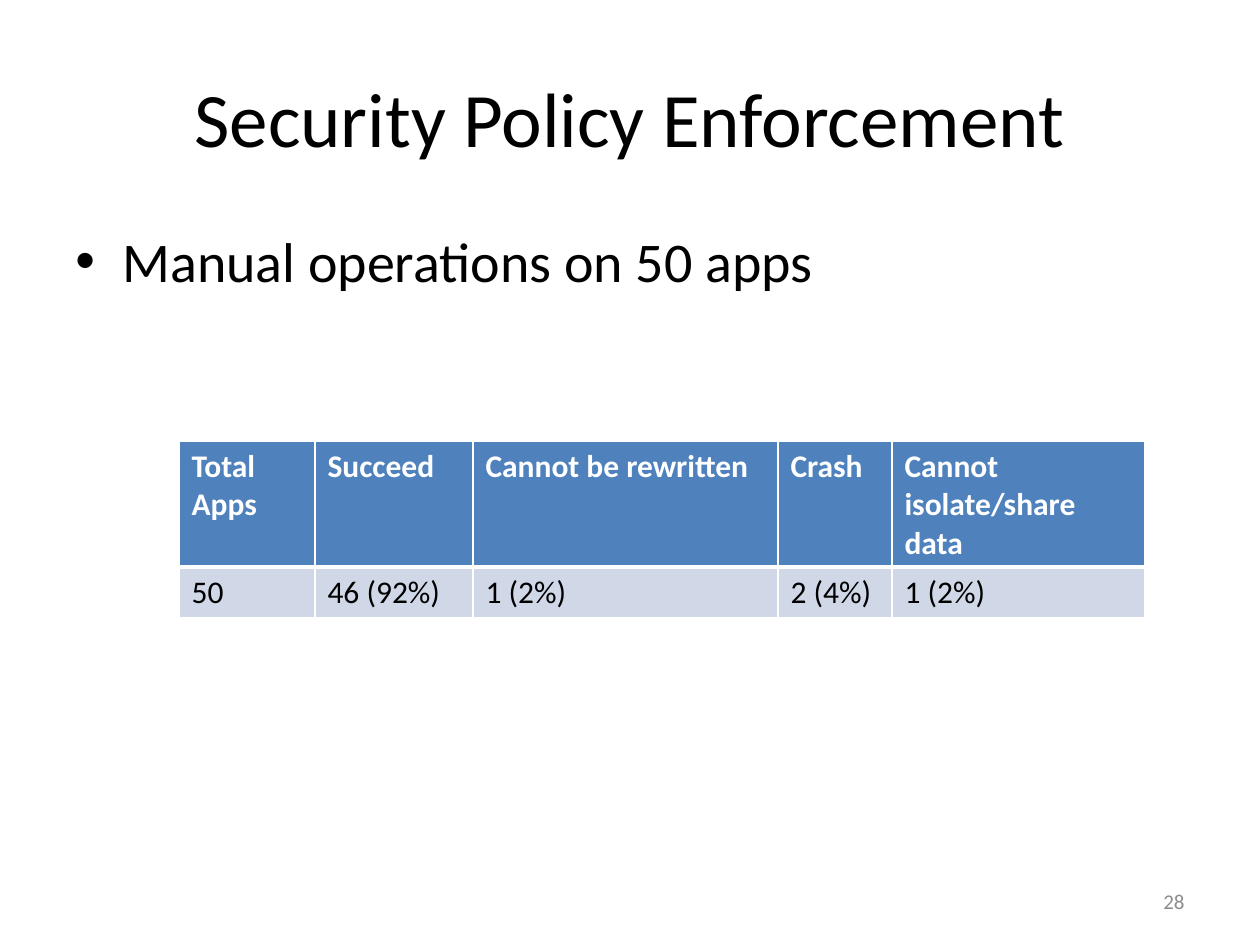
from lxml import etree
from pptx import Presentation
from pptx.dml.color import RGBColor
from pptx.enum.text import MSO_ANCHOR, PP_ALIGN
from pptx.oxml.ns import qn
from pptx.util import Pt

MIDDLE = MSO_ANCHOR.MIDDLE
LEFT, CENTER, RIGHT = PP_ALIGN.LEFT, PP_ALIGN.CENTER, PP_ALIGN.RIGHT
FONT = "Calibri"
COLORS = {"text": "000000", "muted": "8C8C8C", "header": "4F81BD",
          "row": "D0D8E8", "white": "FFFFFF"}

TITLE = "Security Policy Enforcement"
BULLET = "Manual operations on 50 apps"
PAGE_NUMBER = "28"
RESULTS = [
    ("Total Apps", "Succeed", "Cannot be rewritten", "Crash",
     "Cannot isolate/share data"),
    ("50", "46 (92%)", "1 (2%)", "2 (4%)", "1 (2%)"),
]
COLUMN_WIDTHS = [136, 158, 305, 114, 253]
ROW_HEIGHTS = [126, 51]
TABLE_LEFT, TABLE_TOP = 179, 441


def px(length):
    return round(length * 914400 / 126)


def box(*lengths):
    return [px(length) for length in lengths]


def style(paragraph, size, color, align=LEFT, bold=False):
    paragraph.alignment = align
    font = paragraph.font if not paragraph.runs else paragraph.runs[0].font
    font.name, font.size, font.bold = FONT, Pt(size), bold
    font.color.rgb = RGBColor.from_string(COLORS[color])


def add_text(slide, area, text):
    frame = slide.shapes.add_textbox(*box(*area)).text_frame
    frame.word_wrap = True
    frame.text = text
    return frame


def add_bullet(paragraph, indent):
    properties = paragraph._p.get_or_add_pPr()
    properties.set("marL", str(px(indent)))
    properties.set("indent", str(-px(indent)))
    etree.SubElement(properties, qn("a:buFont")).set("typeface", "Arial")
    etree.SubElement(properties, qn("a:buChar")).set("char", "•")


def set_borders(cell, widths):
    properties = cell._tc.get_or_add_tcPr()
    for side, width in widths.items():
        line = etree.SubElement(properties, qn(f"a:ln{side}"), w=str(Pt(width)))
        fill = etree.SubElement(line, qn("a:solidFill"))
        etree.SubElement(fill, qn("a:srgbClr"), val=COLORS["white"])


def add_results(slide):
    area = box(TABLE_LEFT, TABLE_TOP, sum(COLUMN_WIDTHS), sum(ROW_HEIGHTS))
    table = slide.shapes.add_table(len(RESULTS), len(COLUMN_WIDTHS), *area).table
    for column, width in zip(table.columns, COLUMN_WIDTHS):
        column.width = px(width)
    for r, (values, height) in enumerate(zip(RESULTS, ROW_HEIGHTS)):
        table.rows[r].height = px(height)
        header = r == 0
        borders = {"L": 1, "R": 1, "T": 1 if header else 3, "B": 3 if header else 1}
        for c, value in enumerate(values):
            cell = table.cell(r, c)
            cell.text = value
            style(cell.text_frame.paragraphs[0], 18,
                  "white" if header else "text", bold=header)
            set_borders(cell, borders)
            cell.fill.solid()
            cell.fill.fore_color.rgb = RGBColor.from_string(
                COLORS["header" if header else "row"])


def main():
    deck = Presentation()
    deck.slide_width, deck.slide_height = box(1260, 945)
    slide = deck.slides.add_slide(deck.slide_layouts[5])

    title = slide.shapes.title
    title.left, title.top, title.width, title.height = box(63, 38, 1134, 158)
    title.text_frame.text = TITLE
    title.text_frame.vertical_anchor = MIDDLE
    style(title.text_frame.paragraphs[0], 44, "text", CENTER)

    point = add_text(slide, (63, 220, 1134, 624), BULLET).paragraphs[0]
    add_bullet(point, 47)
    style(point, 32, "text")

    number = add_text(slide, (903, 876, 294, 50), PAGE_NUMBER)
    number.vertical_anchor = MIDDLE
    style(number.paragraphs[0], 12, "muted", RIGHT)

    add_results(slide)
    deck.save("out.pptx")


if __name__ == "__main__":
    main()
